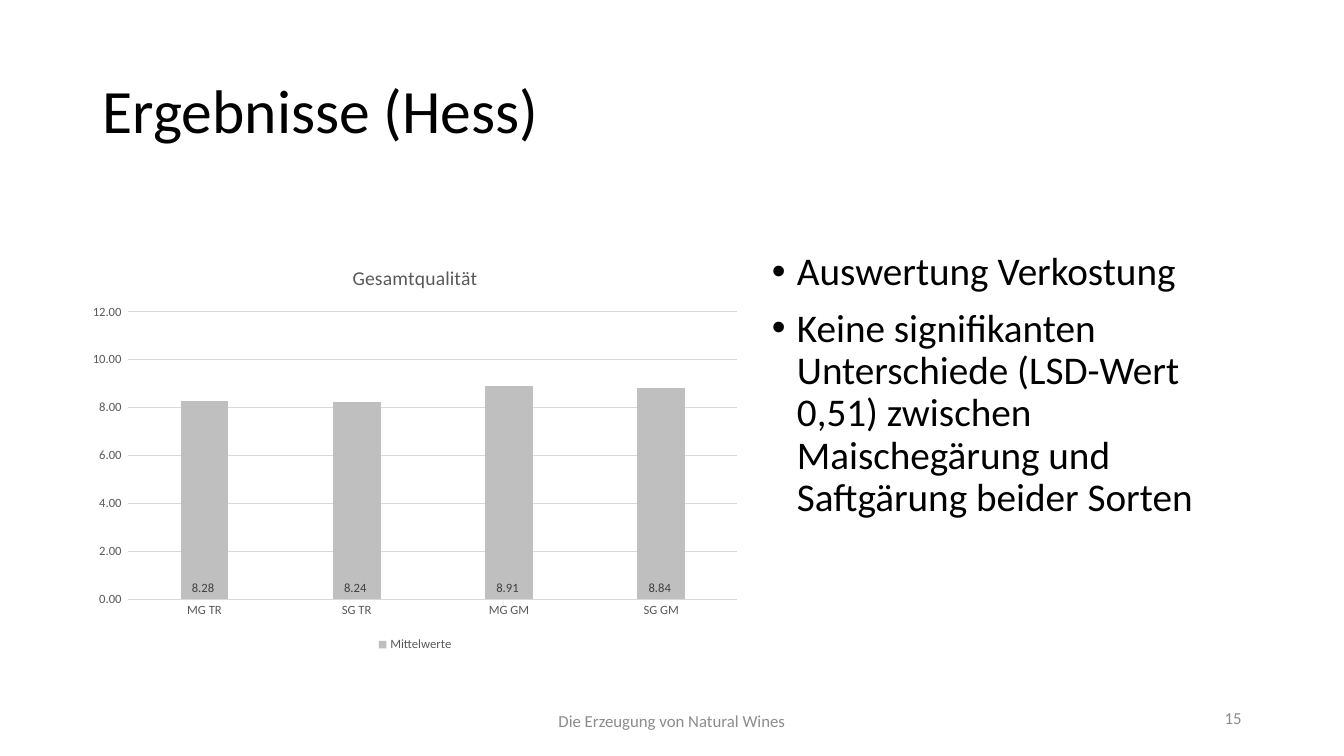
import pptx
import pptx.chart.data
import pptx.dml.color
import pptx.enum.chart
import pptx.enum.text
import pptx.oxml
import pptx.oxml.ns
import pptx.util

Align = pptx.enum.text.PP_ALIGN
Anchor = pptx.enum.text.MSO_ANCHOR


def rgb(hex_color):
    """Turn a hex string into a colour."""
    return pptx.dml.color.RGBColor.from_string(hex_color)


class WineSlide:
    """Hold the style and the slide being filled."""

    family = "Calibri"
    black, label, axis, footer, grid, bar = "000000", "404040", "595959", "8C8C8C", "D9D9D9", "BFBFBF"

    def __init__(self, deck):
        """Add a title-only slide to the deck."""
        self.slide = deck.slides.add_slide(deck.slide_layouts[5])

    def style(self, font, size, color):
        """Apply the typeface with a size and colour."""
        font.name, font.size, font.bold = self.family, pptx.util.Pt(size), False
        font.color.rgb = rgb(color)

    def box(self, place):
        """Add an empty text box."""
        return self.slide.shapes.add_textbox(*map(pptx.util.Cm, place))

    def fill_text(self, shape, lines, size, color, align=Align.LEFT, anchor=Anchor.MIDDLE):
        """Write styled paragraphs into a shape and return them."""
        frame = shape.text_frame
        frame.text = "\n".join(lines)
        frame.word_wrap, frame.vertical_anchor = True, anchor
        frame.auto_size = pptx.enum.text.MSO_AUTO_SIZE.NONE
        for paragraph in frame.paragraphs:
            paragraph.alignment = align
            self.style(paragraph.font, size, color)
        return frame.paragraphs

    def title(self, place, wording):
        """Move and format the title placeholder."""
        heading = self.slide.shapes.title
        heading.left, heading.top, heading.width, heading.height = map(pptx.util.Cm, place)
        self.fill_text(heading, [wording], 44, self.black)[0].line_spacing = 0.9

    def bullets(self, place, findings):
        """Add a bulleted list."""
        for finding in self.fill_text(self.box(place), findings, 28, self.black, anchor=Anchor.TOP):
            finding.line_spacing, finding.space_before = 0.9, pptx.util.Pt(10)
            properties = finding._p.get_or_add_pPr()
            indent = pptx.util.Pt(18)
            properties.set("marL", str(indent))
            properties.set("indent", str(-indent))
            namespace = pptx.oxml.ns.nsdecls("a")
            for bullet in (f'<a:buFont {namespace} typeface="Arial"/>', f'<a:buChar {namespace} char="•"/>'):
                properties.insert_element_before(pptx.oxml.parse_xml(bullet), "a:tabLst", "a:defRPr", "a:extLst")

    def note(self, place, wording, align):
        """Add a small grey footer text."""
        self.fill_text(self.box(place), [wording], 12, self.footer, align)

    def hairline(self, line):
        """Format a thin chart line."""
        line.color.rgb, line.width = rgb(self.grid), pptx.util.Pt(0.75)

    def columns(self, place, heading, series_name, scores):
        """Add a column chart of mean scores."""
        enums, number_format = pptx.enum.chart, "0.00_)"
        ratings = pptx.chart.data.CategoryChartData(number_format=number_format)
        ratings.categories = list(scores)
        ratings.add_series(series_name, scores.values())
        chart = self.slide.shapes.add_chart(
            enums.XL_CHART_TYPE.COLUMN_CLUSTERED, *map(pptx.util.Cm, place), ratings).chart
        self.style(chart.font, 10, self.black)

        chart.has_title = True
        chart.chart_title.include_in_layout = False
        chart.chart_title.text_frame.text = heading
        self.style(chart.chart_title.text_frame.paragraphs[0].font, 14, self.axis)

        chart.has_legend = True
        chart.legend.position = enums.XL_LEGEND_POSITION.BOTTOM
        chart.legend.include_in_layout = False
        self.style(chart.legend.font, 9, self.axis)

        for axis in (chart.category_axis, chart.value_axis):
            axis.major_tick_mark = axis.minor_tick_mark = enums.XL_TICK_MARK.NONE
            self.style(axis.tick_labels.font, 9, self.axis)
        self.hairline(chart.category_axis.format.line)
        scale = chart.value_axis
        scale.minimum_scale, scale.maximum_scale, scale.major_unit = 0, 12, 2
        scale.format.line.fill.background()
        self.hairline(scale.major_gridlines.format.line)
        scale.tick_labels.number_format = number_format
        scale.tick_labels.number_format_is_linked = False

        plot = chart.plots[0]
        plot.gap_width, plot.overlap, plot.vary_by_categories = 219, -27, False
        means = plot.series[0]
        means.format.fill.solid()
        means.format.fill.fore_color.rgb = rgb(self.bar)
        values = means.data_labels
        values.show_value = True
        values.position = enums.XL_LABEL_POSITION.INSIDE_BASE
        values.number_format, values.number_format_is_linked = number_format, False
        self.style(values.font, 9, self.label)


def main():
    """Build and save the slide."""
    deck = pptx.Presentation()
    deck.slide_width, deck.slide_height = pptx.util.Cm(33.87), pptx.util.Cm(19.05)
    results = WineSlide(deck)
    results.title((2.33, 1.01, 29.21, 3.68), "Ergebnisse (Hess)")
    results.bullets((19.2, 6.22, 12.34, 11.05), [
        "Auswertung Verkostung",
        "Keine signifikanten Unterschiede (LSD-Wert 0,51) zwischen Maischegärung und Saftgärung beider Sorten",
    ])
    results.note((11.22, 17.66, 11.43, 1.01), "Die Erzeugung von Natural Wines", Align.CENTER)
    results.note((28.52, 17.73, 3.02, 0.74), "15", Align.RIGHT)
    results.columns((2, 6.22, 16.92, 10.31), "Gesamtqualität", "Mittelwerte",
                    {"MG TR": 8.28, "SG TR": 8.24, "MG GM": 8.91, "SG GM": 8.84})
    deck.save("out.pptx")


if __name__ == "__main__":
    main()
